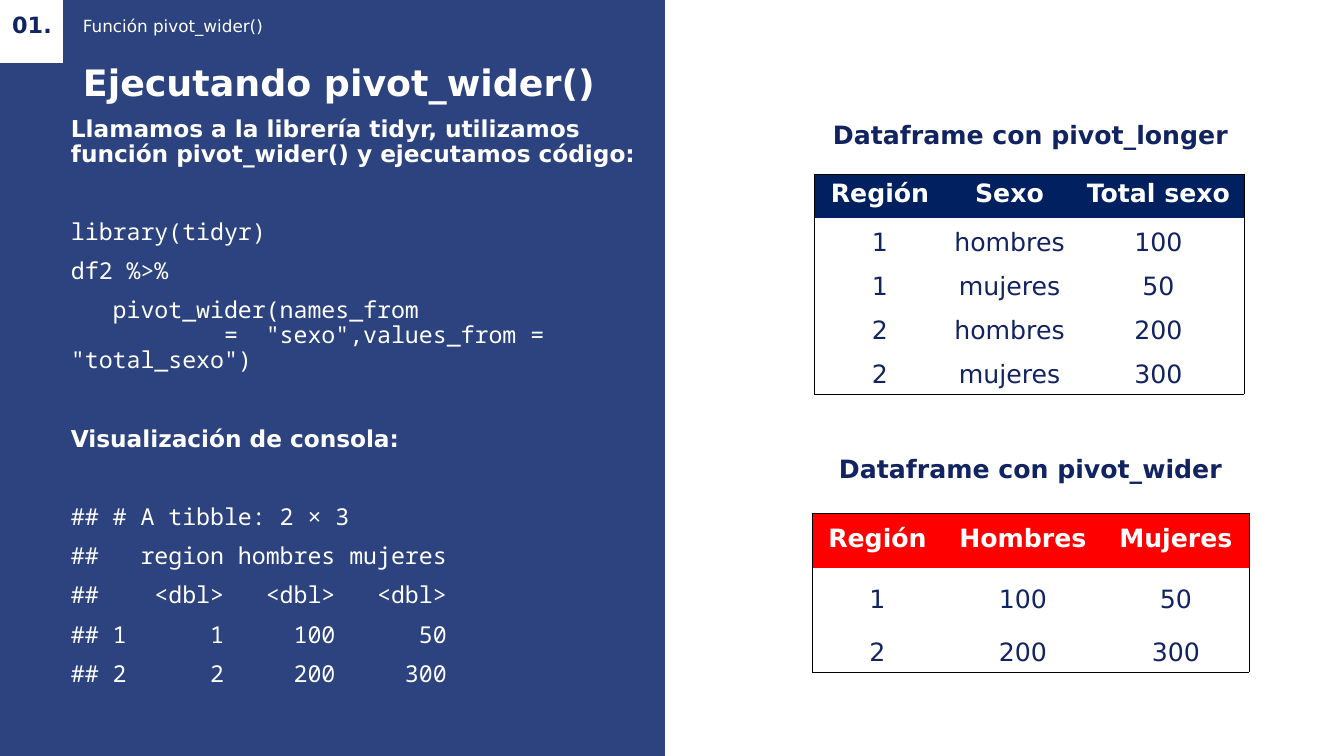
from lxml import etree
from pptx import Presentation
from pptx.dml.color import RGBColor
from pptx.enum.shapes import MSO_SHAPE
from pptx.enum.text import MSO_ANCHOR as ANCHOR, MSO_AUTO_SIZE as AUTO, PP_ALIGN as ALIGN
from pptx.oxml import parse_xml
from pptx.oxml.ns import nsdecls, qn
from pptx.util import Emu, Pt

# Content
COLORS = {"panel": "2C437F", "white": "FFFFFF", "ink": "122361",
          "navy": "002060", "red": "FF0000", "black": "000000"}
SANS, MONO = "DejaVu Sans", "Noto Sans Mono"

NUMBER = "01."
SECTION = "Función pivot_wider()"
TITLE = "Ejecutando pivot_wider()"

# Each block: (is code, paragraphs)
BLOCKS = [
    (False, ["Llamamos a la librería tidyr, utilizamos función pivot_wider() y ejecutamos código:"]),
    (True, ["library(tidyr)",
            "df2 %>%",
            '   pivot_wider(names_from\v           =  "sexo",values_from =\v"total_sexo")']),
    (False, ["Visualización de consola:"]),
    (True, ["## # A tibble: 2 × 3",
            "##   region hombres mujeres",
            "##    <dbl>   <dbl>   <dbl>",
            "## 1      1     100      50",
            "## 2      2     200     300"]),
]

TABLES = [
    {"heading": "Dataframe con pivot_longer", "heading_top": 114,
     "at": (814, 174), "cols": (132, 127, 171), "rows": (44,) * 5, "head": "navy",
     "data": [("Región", "Sexo", "Total sexo"),
              ("1", "hombres", "100"), ("1", "mujeres", "50"),
              ("2", "hombres", "200"), ("2", "mujeres", "300")]},
    {"heading": "Dataframe con pivot_wider", "heading_top": 448,
     "at": (812, 513), "cols": (131, 160, 146), "rows": (55, 51, 53), "head": "red",
     "data": [("Región", "Hombres", "Mujeres"),
              ("1", "100", "50"), ("2", "200", "300")]},
]

WIDTH, HEIGHT = 1344, 756
PX = 914400 / 100.8
NO_GRID = "{2D5ABB26-0587-4C30-8999-92F81FD0307C}"


def px(n):
    return Emu(round(n * PX))


def rgb(name):
    return RGBColor.from_string(COLORS[name])


def style(p, size, color, bold=False, font=SANS, align=ALIGN.LEFT):
    p.alignment = align
    for r in p.runs:
        r.font.size, r.font.bold, r.font.name = Pt(size), bold, font
        r.font.color.rgb = rgb(color)
    for br in p._p.findall(qn("a:br")):
        etree.SubElement(br, qn("a:rPr"), sz=str(round(size * 100)))


def frame(sp, anchor):
    tf = sp.text_frame
    tf.word_wrap, tf.auto_size, tf.vertical_anchor = True, AUTO.NONE, anchor
    tf.margin_left = tf.margin_right = 0
    tf.margin_top = tf.margin_bottom = px(5)
    return tf


def add_rect(shapes, width, height, color):
    sp = shapes.add_shape(MSO_SHAPE.RECTANGLE, 0, 0, px(width), px(height))
    sp.shadow.inherit = False
    sp.fill.solid()
    sp.fill.fore_color.rgb = rgb(color)
    sp.line.fill.background()


def add_text(shapes, box, text, size, color, **look):
    sp = shapes.add_textbox(*map(px, box))
    tf = frame(sp, ANCHOR.MIDDLE)
    tf.text = text
    style(tf.paragraphs[0], size, color, **look)


def add_code(shapes):
    tf = frame(shapes.add_textbox(px(71), px(112), px(601), px(626)), ANCHOR.TOP)
    p = None
    for is_code, lines in BLOCKS:
        for i, line in enumerate(lines):
            if p is None:
                p = tf.paragraphs[0]
            else:
                p = tf.add_paragraph()
                p.space_before = Pt(10 if i else 38)
            p.text = line
            p.line_spacing = 0.9
            style(p, 16.6, "white", bold=not is_code, font=MONO if is_code else SANS)


def add_border(cell, sides):
    tc_pr = cell._tc.get_or_add_tcPr()
    for i, side in enumerate(sides):
        tc_pr.insert(i, parse_xml(
            f'<a:ln{side} {nsdecls("a")} w="6350"><a:solidFill>'
            f'<a:srgbClr val="{COLORS["black"]}"/></a:solidFill></a:ln{side}>'))


def add_data_table(shapes, t):
    n_rows, n_cols = len(t["rows"]), len(t["cols"])
    size = sum(t["cols"]), sum(t["rows"])
    table = shapes.add_table(n_rows, n_cols, *map(px, t["at"] + size)).table
    table._tbl.tblPr.find(qn("a:tableStyleId")).text = NO_GRID
    table.horz_banding = False
    for col, width in zip(table.columns, t["cols"]):
        col.width = px(width)
    for row, height in zip(table.rows, t["rows"]):
        row.height = px(height)
    for r, values in enumerate(t["data"]):
        head = r == 0
        for c, value in enumerate(values):
            cell = table.cell(r, c)
            cell.text = value
            cell.margin_left = cell.margin_right = cell.margin_top = px(1)
            cell.margin_bottom = px(5)
            cell.vertical_anchor = ANCHOR.MIDDLE if head else ANCHOR.BOTTOM
            cell.fill.solid()
            cell.fill.fore_color.rgb = rgb(t["head"] if head else "white")
            style(cell.text_frame.paragraphs[0], 18, "white" if head else "ink",
                  bold=head, align=ALIGN.CENTER)
            # Only the outer edge of the table is ruled
            edges = {"L": c == 0, "R": c == n_cols - 1, "T": head, "B": r == n_rows - 1}
            add_border(cell, [side for side, on in edges.items() if on])


def main():
    prs = Presentation()
    prs.slide_width, prs.slide_height = px(WIDTH), px(HEIGHT)
    slide = prs.slides.add_slide(prs.slide_layouts[5])
    shapes = slide.shapes

    # Left panel and number tile
    add_rect(shapes, 665, HEIGHT, "panel")
    add_rect(shapes, 63, 63, "white")
    add_text(shapes, (0, 6, 64, 38), NUMBER, 16, "ink", bold=True, align=ALIGN.CENTER)
    add_text(shapes, (83, -1, 570, 54), SECTION, 12, "white")

    # Title, brought in front of the panel
    title = shapes.title
    title.left, title.top, title.width, title.height = map(px, (83, 55, 570, 56))
    tf = frame(title, ANCHOR.TOP)
    tf.text = TITLE
    style(tf.paragraphs[0], 26, "white", bold=True)
    shapes._spTree.append(title._element)

    # Code and console output
    add_code(shapes)

    # Tables with their headings
    for t in TABLES:
        add_text(shapes, (743, t["heading_top"], 575, 40), t["heading"], 18, "ink",
                 bold=True, align=ALIGN.CENTER)
        add_data_table(shapes, t)

    prs.save("out.pptx")


if __name__ == "__main__":
    main()
